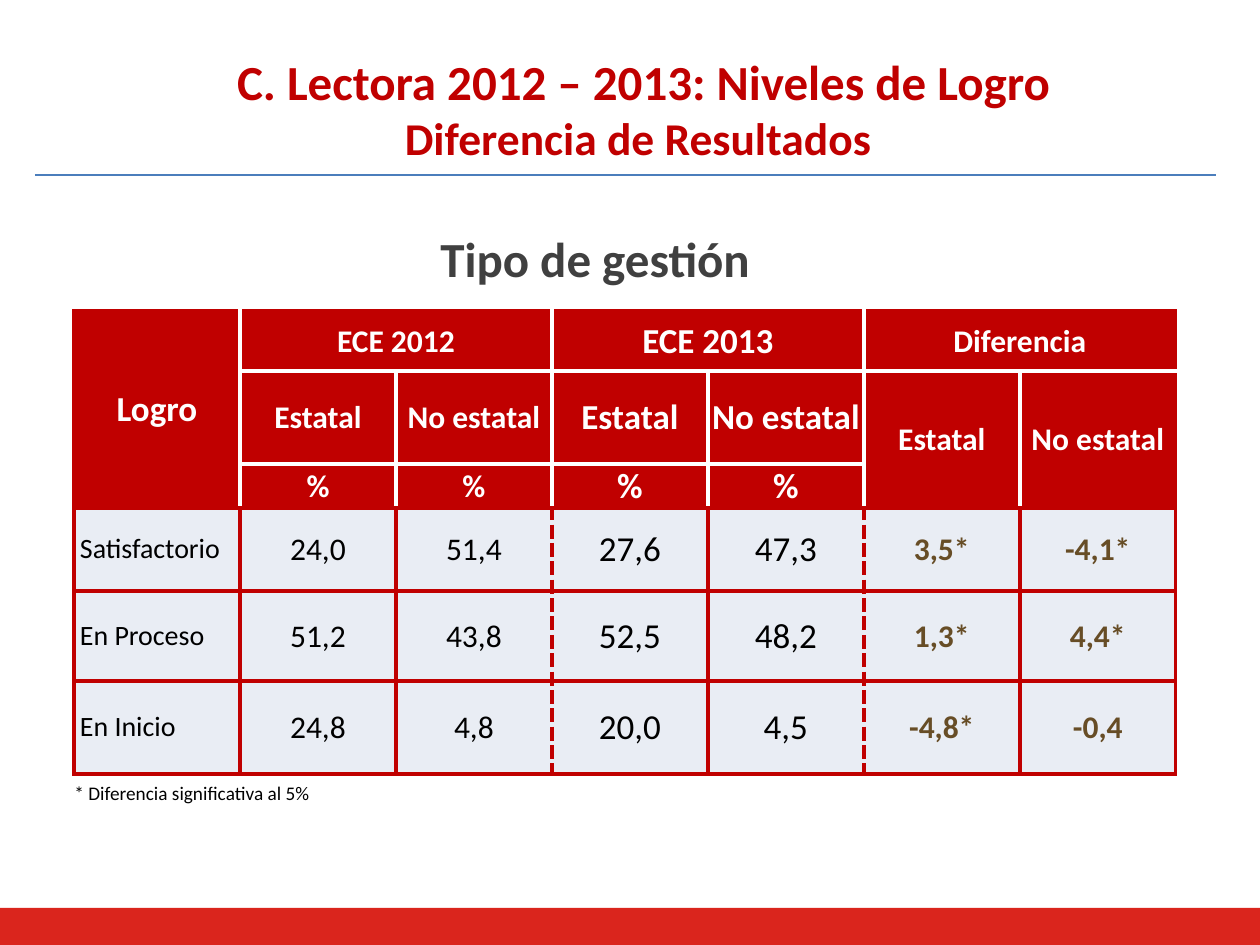
"""Build the slide comparing reading achievement levels by school type, 2012 and 2013."""
import lxml.etree
import pptx
import pptx.dml.color
import pptx.enum.shapes
import pptx.enum.text
import pptx.oxml
import pptx.oxml.ns
import pptx.util

RED = pptx.dml.color.RGBColor(0xC0, 0x00, 0x00)
BAND_RED = pptx.dml.color.RGBColor(0xDA, 0x25, 0x1D)
WHITE = pptx.dml.color.RGBColor(0xFF, 0xFF, 0xFF)
BLACK = pptx.dml.color.RGBColor(0x00, 0x00, 0x00)
GRAY = pptx.dml.color.RGBColor(0x40, 0x40, 0x40)
BROWN = pptx.dml.color.RGBColor(0x67, 0x4D, 0x26)
PALE = pptx.dml.color.RGBColor(0xE9, 0xED, 0xF4)
BLUE = pptx.dml.color.RGBColor(0x4B, 0x7E, 0xBC)
ALIGN = pptx.enum.text.PP_ALIGN
ANCHOR = pptx.enum.text.MSO_ANCHOR
PLAIN_TABLE = "{2D5ABB26-0587-4C30-8999-92F81FD0307C}"

TITLE = [("C. Lectora 2012 – 2013: Niveles de Logro", 28), ("Diferencia de Resultados ", 26)]
HEADING = "Tipo de gestión"
FOOTNOTE = "* Diferencia significativa al 5%"
ROWS = [
    ["Logro", "ECE 2012", "", "ECE 2013", "", "Diferencia", ""],
    ["", "Estatal", "No estatal", "Estatal", "No estatal", "Estatal", "No estatal"],
    ["", "%", "%", "%", "%", "", ""],
    ["Satisfactorio", "24,0", "51,4", "27,6", "47,3", "3,5*", "-4,1*"],
    ["En Proceso", "51,2", "43,8", "52,5", "48,2", "1,3*", "4,4*"],
    ["En Inicio", "24,8", "4,8", "20,0", "4,5", "-4,8*", "-0,4"],
]
HEADER_ROWS = 3
SPANS = {(0, 0): (3, 1), (0, 1): (1, 2), (0, 3): (1, 2), (0, 5): (1, 2), (1, 5): (2, 1), (1, 6): (2, 1)}
COLUMN_WIDTHS = [166] + [156] * 6
ROW_HEIGHTS = [60, 93, 44, 83, 90, 93]
LARGE_COLUMNS = (3, 4)
DASHED_BOUNDARIES = (3, 5)


def px(length):
    return pptx.util.Emu(round(length * 914400 / 126))


def add_text(para, text, size=18, color=BLACK, bold=False, align=ALIGN.LEFT):
    para.alignment = align
    span = para.add_run()
    span.text = text
    span.font.name = "Calibri"
    span.font.size = pptx.util.Pt(size)
    span.font.bold = bold
    span.font.color.rgb = color
    return span


def add_box(page, left, top, width, height, wrap):
    box = page.shapes.add_textbox(px(left), px(top), px(width), px(height))
    box.text_frame.word_wrap = wrap
    return box.text_frame.paragraphs[0]


def add_shadow(span):
    shadow = pptx.oxml.parse_xml(
        f'<a:effectLst {pptx.oxml.ns.nsdecls("a")}>'
        '<a:outerShdw blurRad="38100" dist="38100" dir="2700000" algn="tl">'
        '<a:srgbClr val="000000"><a:alpha val="43000"/></a:srgbClr></a:outerShdw></a:effectLst>')
    span.font.fill._xPr.find(pptx.oxml.ns.qn("a:solidFill")).addnext(shadow)


def add_border(cell, side, color, dash):
    cell._tc.get_or_add_tcPr().append(pptx.oxml.parse_xml(
        f'<a:ln{side} {pptx.oxml.ns.nsdecls("a")} w="28575"><a:solidFill><a:srgbClr val="{color}"/>'
        f'</a:solidFill><a:prstDash val="{dash}"/></a:ln{side}>'))


def draw_cell(table, row, column):
    height, width = SPANS.get((row, column), (1, 1))
    bottom, right = row + height, column + width
    header = row < HEADER_ROWS
    inner = {
        "L": column > 0,
        "R": right < len(COLUMN_WIDTHS),
        "T": row > 0,
        "B": bottom < HEADER_ROWS,
    }
    boundary = {"L": column, "R": right}
    for part_row in range(row, bottom):
        for part_column in range(column, right):
            part = table.cell(part_row, part_column)
            for side, is_inner in inner.items():
                dashed = not header and boundary.get(side) in DASHED_BOUNDARIES
                add_border(part, side, WHITE if header and is_inner else RED, "sysDash" if dashed else "solid")
            part.fill.solid()
            part.fill.fore_color.rgb = RED if header else PALE

    cell = table.cell(row, column)
    if (height, width) != (1, 1):
        cell.merge(table.cell(bottom - 1, right - 1))
    label = not header and column == 0
    cell.vertical_anchor = ANCHOR.MIDDLE
    cell.margin_left = cell.margin_right = px(6 if label else 1)
    cell.margin_top = px(0 if label else 1)
    cell.margin_bottom = 0
    large = column in LARGE_COLUMNS or (header and column == 0)
    difference = column >= DASHED_BOUNDARIES[-1]
    add_text(
        cell.text_frame.paragraphs[0], ROWS[row][column],
        size=16 if label else 20 if large else 18,
        color=WHITE if header else BROWN if difference else BLACK,
        bold=header or difference,
        align=ALIGN.LEFT if label else ALIGN.CENTER)


def add_results(page):
    frame = page.shapes.add_table(
        len(ROWS), len(COLUMN_WIDTHS), px(74), px(311), px(sum(COLUMN_WIDTHS)), px(sum(ROW_HEIGHTS)))
    table = frame.table
    table._tbl.tblPr.find(pptx.oxml.ns.qn("a:tableStyleId")).text = PLAIN_TABLE
    table.horz_banding = False
    for column, width in zip(table.columns, COLUMN_WIDTHS):
        column.width = px(width)
    for row, height in zip(table.rows, ROW_HEIGHTS):
        row.height = px(height)
    for row, texts in enumerate(ROWS):
        for column, text in enumerate(texts):
            if text:
                draw_cell(table, row, column)


def main():
    deck = pptx.Presentation()
    deck.slide_width, deck.slide_height = px(1260), px(945)
    page = deck.slides.add_slide(deck.slide_layouts[5])

    band = page.shapes.add_shape(
        pptx.enum.shapes.MSO_SHAPE.RECTANGLE, 0, px(908), px(1260), px(37))
    band.shadow.inherit = False
    band.fill.solid()
    band.fill.fore_color.rgb = BAND_RED
    band.line.fill.background()

    title = page.shapes.title
    title.left, title.top, title.width, title.height = px(123), px(29), px(1041), px(158)
    frame = title.text_frame
    frame.vertical_anchor = ANCHOR.MIDDLE
    for index, (text, size) in enumerate(TITLE):
        para = frame.add_paragraph() if index else frame.paragraphs[0]
        para.space_before = 0
        add_text(para, text, size=size, color=RED, bold=True, align=ALIGN.CENTER)

    rule = page.shapes.add_connector(
        pptx.enum.shapes.MSO_CONNECTOR.STRAIGHT, px(35), px(175), px(1216), px(175))
    rule.line.color.rgb = BLUE
    rule.line.width = pptx.util.Pt(0.75)
    lxml.etree.SubElement(rule._element.spPr, pptx.oxml.ns.qn("a:effectLst"))

    heading = add_box(page, 428, 222, 339, 72, wrap=False)
    add_shadow(add_text(heading, HEADING, size=28, color=GRAY, bold=True))
    add_text(add_box(page, 62, 775, 867, 36, wrap=True), FOOTNOTE, size=11)
    add_results(page)
    deck.save("out.pptx")


if __name__ == "__main__":
    main()
